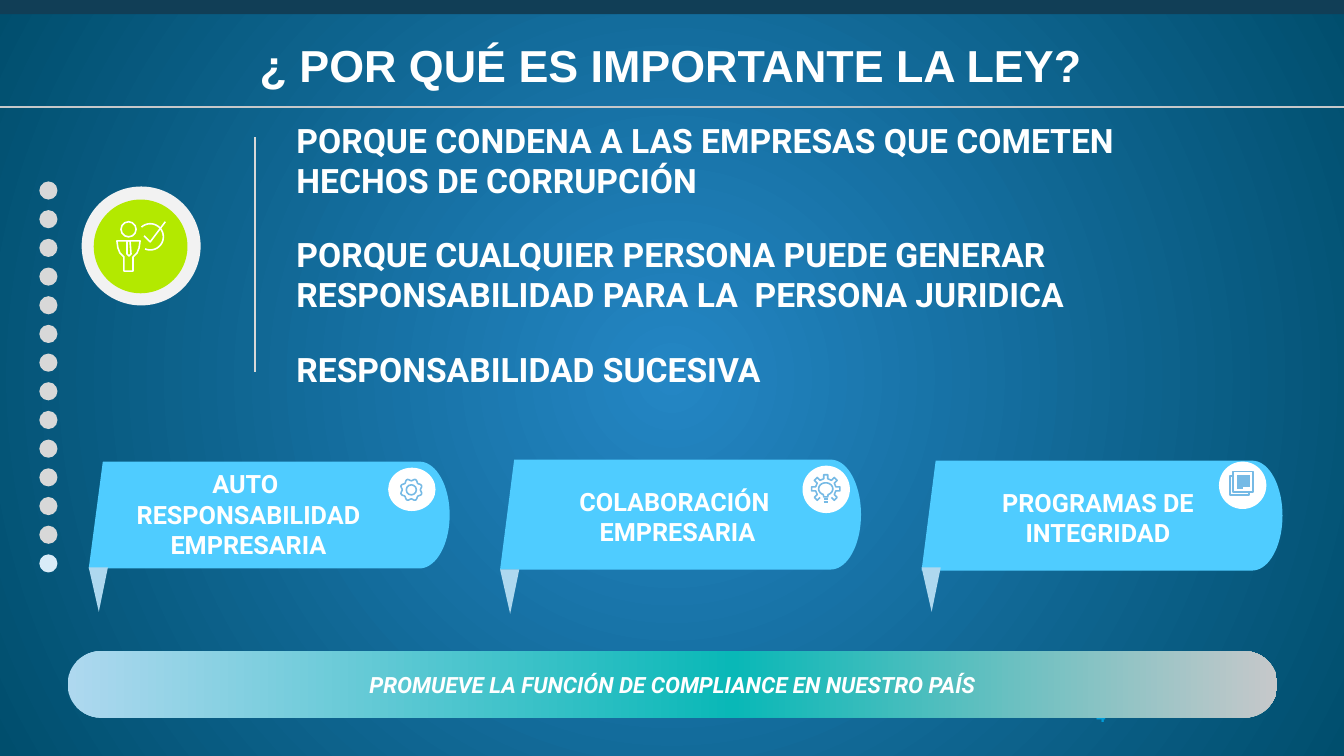
from dataclasses import dataclass
from math import cos, radians, sin

from lxml.etree import SubElement
from pptx import Presentation
from pptx.dml.color import RGBColor
from pptx.enum.shapes import MSO_CONNECTOR, MSO_SHAPE
from pptx.enum.text import MSO_ANCHOR, PP_ALIGN
from pptx.oxml.ns import qn
from pptx.util import Inches, Pt


@dataclass(frozen=True)
class Theme:
    white: str = "FFFFFF"
    navy: str = "113E56"
    center_blue: str = "2486C4"
    edge_blue: str = "004E6D"
    banner: str = "4FCCFF"
    pale_blue: str = "AED8EF"
    last_dot: str = "D9ECF8"
    icon_blue: str = "76BAE5"
    number_blue: str = "009DD9"
    teal: str = "09B8B7"
    lime: str = "B3E900"
    silver: str = "C6C8CA"
    gray: str = "D8D8D8"
    ring: str = "F2F2F2"
    title_font: str = "Arial"
    body_font: str = "Roboto"
    title_size: int = 32
    reason_size: int = 24
    banner_size: int = 18
    footer_size: int = 16
    number_size: int = 12
    rule_width: float = 1
    icon_width: float = 1.12


theme = Theme()


def paint(shape, fill=None, line=None):
    shape.shadow.inherit = False
    if fill:
        shape.fill.solid()
        shape.fill.fore_color.rgb = RGBColor.from_string(fill)
    else:
        shape.fill.background()
    if line:
        shape.line.color.rgb = RGBColor.from_string(line)
        shape.line.width = Pt(theme.icon_width)
    else:
        shape.line.fill.background()


def write(shape, lines, size, color=theme.white, font=theme.body_font,
          align=PP_ALIGN.CENTER, anchor=MSO_ANCHOR.BOTTOM, italic=None):
    frame = shape.text_frame
    frame.word_wrap = True
    frame.vertical_anchor = anchor
    frame.margin_left = frame.margin_right = 0
    frame.margin_top = frame.margin_bottom = 0
    for index, text in enumerate(lines):
        paragraph = frame.add_paragraph() if index else frame.paragraphs[0]
        paragraph.alignment = align
        run = paragraph.add_run()
        run.text = text
        run.font.name = font
        run.font.size = Pt(size)
        run.font.bold = True
        run.font.italic = italic
        run.font.color.rgb = RGBColor.from_string(color)


presentation = Presentation()
presentation.slide_width = Inches(13.33)
presentation.slide_height = Inches(7.5)
slide = presentation.slides.add_slide(presentation.slide_layouts[6])
shapes = slide.shapes
slide.background.fill.gradient()

top_bar = shapes.add_shape(MSO_SHAPE.RECTANGLE, 0, 0, Inches(13.33), Inches(0.14))
paint(top_bar, theme.navy)

title = shapes.add_textbox(Inches(0.65), Inches(0.48), Inches(12.01), Inches(0.71))
write(title, ["¿ POR QUÉ ES IMPORTANTE LA LEY?"], theme.title_size,
      font=theme.title_font, anchor=MSO_ANCHOR.TOP)
title.text_frame.paragraphs[0].line_spacing = 0.8

slide_number = shapes.add_textbox(Inches(9.42), Inches(7), Inches(3), Inches(0.3))
write(slide_number, ["4"], theme.number_size, theme.number_blue, anchor=MSO_ANCHOR.TOP)

reasons = [
    (1.18, 0.81, "PORQUE CONDENA A LAS EMPRESAS QUE COMETEN HECHOS DE CORRUPCIÓN"),
    (2.31, 0.81, "PORQUE CUALQUIER PERSONA PUEDE GENERAR RESPONSABILIDAD PARA LA  PERSONA JURIDICA"),
    (3.46, 0.4, "RESPONSABILIDAD SUCESIVA"),
]
for top, height, text in reasons:
    reason = shapes.add_textbox(Inches(2.94), Inches(top), Inches(8.99), Inches(height))
    write(reason, [text], theme.reason_size, align=PP_ALIGN.LEFT)

banners = [
    (0.88, 4.58, 5.64, 5.63, (0.83, 4.64, 3.27, 0.91), ["AUTO ", "RESPONSABILIDAD EMPRESARIA"]),
    (4.96, 4.56, 5.65, 5.65, (5.44, 4.81, 2.5, 0.61), ["COLABORACIÓN", " EMPRESARIA"]),
    (9.14, 4.57, 5.66, 5.63, (9.59, 4.82, 2.6, 0.61), ["PROGRAMAS DE INTEGRIDAD"]),
]
outlines = []
for left, top, bottom, tail_top, label_box, lines in banners:
    middle, radius = (top + bottom) / 2, (bottom - top) / 2
    cap = [(left + 3.28 + 0.3 * cos(radians(angle)), middle + radius * sin(radians(angle)))
           for angle in range(-90, 91, 5)]
    tail = [(left, tail_top), (left + 0.19, tail_top), (left + 0.1, tail_top + 0.44)]
    outlines += [
        ([(left, bottom), (left + 0.14, top)] + cap, True, theme.banner, None),
        (tail, True, theme.pale_blue, None),
    ]

gear = [(4.08 + radius * cos(radians(angle)), 4.86 + radius * sin(radians(angle)))
        for angle in range(0, 360, 5)
        for radius in [0.1 - 0.01 * cos(radians(8 * angle))]]
cog = [(8.19 + out * cos(radians(angle)) - side * sin(radians(angle)),
        4.85 + out * sin(radians(angle)) + side * cos(radians(angle)))
       for angle in range(45, -226, -45)
       for out, side in [(0.1, 0.02), (0.14, 0.02), (0.14, -0.02), (0.1, -0.02)]]
bulb = [(8.19 + 0.07 * cos(radians(angle)), 4.85 + 0.06 * sin(radians(angle)))
        for angle in range(110, 431, 10)] + [(8.21, 4.93), (8.17, 4.93)]
check_circle = [(1.49 + 0.13 * cos(radians(angle)), 2.35 + 0.13 * sin(radians(angle)))
                for angle in range(228, 474, 5)]
body = [(1.16, 2.39), (1.17, 2.46), (1.19, 2.51), (1.23, 2.55), (1.23, 2.69),
        (1.32, 2.69), (1.32, 2.55), (1.36, 2.51), (1.38, 2.46), (1.39, 2.39)]
necktie = [(1.26, 2.39), (1.26, 2.52), (1.28, 2.54), (1.3, 2.52), (1.29, 2.39)]
check_mark = [(1.64, 2.2), (1.49, 2.4), (1.43, 2.34)]
back_page = [(12.23, 4.72), (12.2, 4.72), (12.2, 4.91), (12.39, 4.91), (12.39, 4.88)]
outlines += [
    (gear, True, None, theme.icon_blue),
    (cog, False, None, theme.icon_blue),
    (bulb, True, None, theme.icon_blue),
    (back_page, False, None, theme.icon_blue),
    (body, True, None, theme.white),
    (necktie, True, None, theme.white),
    (check_circle, False, None, theme.white),
    (check_mark, False, None, theme.white),
]

circles = [(0.39, 1.8 + index * 3.7 / 13, 0.18, 0.18,
            theme.last_dot if index == 13 else theme.gray, None) for index in range(14)]
circles += [
    (3.85, 4.64, 0.47, 0.43, theme.white, None),
    (7.96, 4.62, 0.47, 0.47, theme.white, None),
    (12.09, 4.58, 0.47, 0.47, theme.white, None),
    (0.81, 1.85, 1.18, 1.18, theme.ring, None),
    (0.93, 1.98, 0.93, 0.93, theme.lime, None),
    (4.03, 4.81, 0.1, 0.1, None, theme.icon_blue),
    (1.2, 2.2, 0.15, 0.15, None, theme.white),
]

banner_outline_count = 2 * len(banners)
for points, closed, fill, line in outlines[:banner_outline_count]:
    corners = [(Inches(x), Inches(y)) for x, y in points]
for layer in (outlines[:banner_outline_count], circles, outlines[banner_outline_count:]):
    for item in layer:
        if layer is circles:
            left, top, width, height, fill, line = item
            shape = shapes.add_shape(MSO_SHAPE.OVAL, Inches(left), Inches(top),
                                     Inches(width), Inches(height))
        else:
            points, closed, fill, line = item
            corners = [(Inches(x), Inches(y)) for x, y in points]
            builder = shapes.build_freeform(*corners[0])
            builder.add_line_segments(corners[1:], close=closed)
            shape = builder.convert_to_shape()
        paint(shape, fill, line)

for left, top, bottom, tail_top, label_box, lines in banners:
    label = shapes.add_textbox(*[Inches(length) for length in label_box])
    write(label, lines, theme.banner_size)

front_page = shapes.add_shape(MSO_SHAPE.RECTANGLE, Inches(12.23), Inches(4.68), Inches(0.2), Inches(0.2))
paint(front_page, None, theme.icon_blue)

rules = [
    (0, 1.06, 13.33, 1.06, theme.silver, theme.rule_width),
    (2.53, 1.36, 2.53, 3.69, theme.gray, theme.rule_width),
    (8.17, 4.95, 8.21, 4.95, theme.icon_blue, theme.icon_width),
    (8.17, 4.98, 8.21, 4.98, theme.icon_blue, theme.icon_width),
    (8.19, 4.98, 8.19, 4.99, theme.icon_blue, theme.icon_width),
]
rules += [(12.27, 4.72 + 0.02 * row, 12.33 if row == 6 else 12.4, 4.72 + 0.02 * row,
           theme.icon_blue, theme.icon_width) for row in range(7)]
for *ends, color, width in rules:
    rule = shapes.add_connector(MSO_CONNECTOR.STRAIGHT, *[Inches(end) for end in ends])
    rule.line.color.rgb = RGBColor.from_string(color)
    rule.line.width = Pt(width)
    SubElement(rule._element.spPr, qn("a:effectLst"))

footer = shapes.add_shape(MSO_SHAPE.ROUNDED_RECTANGLE, Inches(0.67), Inches(6.46), Inches(12), Inches(0.66))
footer.adjustments[0] = 0.5
paint(footer)
footer.fill.gradient()
write(footer, ["PROMUEVE LA FUNCIÓN DE COMPLIANCE EN NUESTRO PAÍS"], theme.footer_size,
      anchor=MSO_ANCHOR.MIDDLE, italic=True)

gradients = [
    (slide.background._cSld.bg, [(0, theme.center_blue), (100, theme.edge_blue)], True),
    (footer._element, [(0, theme.pale_blue), (55, theme.teal), (100, theme.silver)], False),
]
for owner, stops, radial in gradients:
    gradient = owner.xpath(".//a:gradFill")[0]
    for child in list(gradient):
        gradient.remove(child)
    stop_list = SubElement(gradient, qn("a:gsLst"))
    for position, color in stops:
        stop = SubElement(stop_list, qn("a:gs"), pos=str(position * 1000))
        SubElement(stop, qn("a:srgbClr"), val=color)
    if radial:
        circle = SubElement(gradient, qn("a:path"), path="circle")
        SubElement(circle, qn("a:fillToRect"), l="50000", t="50000", r="50000", b="50000")
    else:
        SubElement(gradient, qn("a:lin"), ang="0", scaled="0")

presentation.save("out.pptx")
